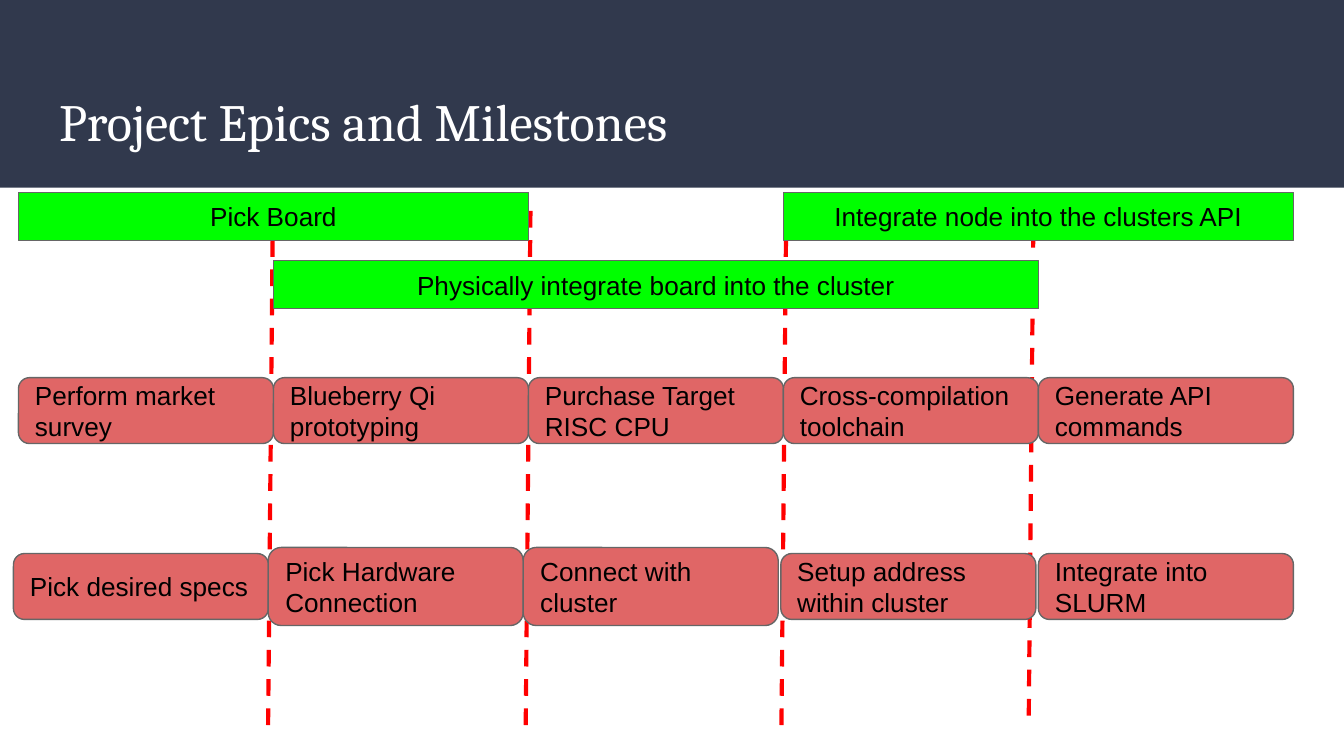
from lxml.etree import SubElement
from pptx import Presentation
from pptx.dml.color import RGBColor
from pptx.enum.dml import MSO_LINE_DASH_STYLE as Dash
from pptx.enum.shapes import MSO_CONNECTOR as Connector, MSO_SHAPE as Shape
from pptx.enum.text import MSO_ANCHOR as Anchor, PP_ALIGN as Align
from pptx.oxml.ns import qn
from pptx.util import Pt

NAVY = RGBColor(0x31, 0x39, 0x4D)
WHITE = RGBColor(0xFF, 0xFF, 0xFF)
BLACK = RGBColor(0, 0, 0)
GREEN = RGBColor(0, 0xFF, 0)
CORAL = RGBColor(0xE0, 0x66, 0x66)
GRAY = RGBColor(0x66, 0x66, 0x66)
RED = RGBColor(0xFF, 0, 0)

TITLE = "Project Epics and Milestones"
EPICS = [
    ("Pick Board", 0, 2, 103),
    ("Physically integrate board into the cluster", 1, 3, 139.7),
    ("Integrate node into the clusters API", 3, 2, 103),
]
FIRST_MILESTONES = [
    "Perform market survey",
    "Blueberry Qi prototyping",
    "Purchase Target RISC CPU",
    "Cross-compilation toolchain",
    "Generate API commands",
]
SECOND_MILESTONES = [
    ("Pick desired specs", 7.2, 35.3),
    ("Pick Hardware Connection", 143.7, 41.8),
    ("Connect with cluster", 280.3, 41.8),
    ("Setup address within cluster", 418.3, 35.3),
    ("Integrate into SLURM", 556.3, 35.3),
]
DIVIDERS = [(146.2, 113), (284.2, 113), (421.2, 113), (553.7, 108)]

LEFT, COLUMN = 9.9, 136.6
EPIC_HEIGHT, MILESTONE_HEIGHT = 25.8, 35.3
FIRST_CENTER, SECOND_CENTER = 220, 314.2
DIVIDER_HEIGHT, DIVIDER_SLANT = 280, 2.6
INSET = 7.2

TITLE_FONT = {"name": "Cambria", "size": Pt(28), "bold": False}
BOX_FONT = {"name": "Arial", "size": Pt(14)}


def write(shape, text, font, color, align, anchor):
    frame = shape.text_frame
    frame.text = text
    settings = {"word_wrap": True, "vertical_anchor": anchor}
    for side in ("left", "top", "right", "bottom"):
        settings[f"margin_{side}"] = Pt(INSET)
    for name, value in settings.items():
        setattr(frame, name, value)
    paragraph = frame.paragraphs[0]
    paragraph.alignment = align
    for name, value in font.items():
        setattr(paragraph.font, name, value)
    paragraph.font.color.rgb = color


def add_box(slide, kind, left, top, width, height, fill):
    shape = slide.shapes.add_shape(kind, Pt(left), Pt(top), Pt(width), Pt(height))
    shape.shadow.inherit = False
    shape.fill.solid()
    shape.fill.fore_color.rgb = fill
    shape.line.color.rgb = GRAY
    shape.line.width = Pt(0.75)
    return shape


def add_milestone(slide, text, left, center, height):
    shape = add_box(slide, Shape.ROUNDED_RECTANGLE, left, center - height / 2,
                    COLUMN, height, CORAL)
    write(shape, text, BOX_FONT, BLACK, Align.LEFT, Anchor.MIDDLE)


def add_divider(slide, left, top):
    line = slide.shapes.add_connector(
        Connector.STRAIGHT, Pt(left), Pt(top),
        Pt(left - DIVIDER_SLANT), Pt(top + DIVIDER_HEIGHT))
    line.line.color.rgb = RED
    line.line.width = Pt(2.25)
    line.line.dash_style = Dash.DASH
    SubElement(line.element.spPr, qn("a:effectLst"))


def main():
    presentation = Presentation()
    presentation.slide_width, presentation.slide_height = Pt(720), Pt(405)
    slide = presentation.slides.add_slide(presentation.slide_layouts[5])

    title = slide.shapes.title
    title.left, title.top, title.width, title.height = Pt(24.5), Pt(39.6), Pt(671), Pt(49)
    write(title, TITLE, TITLE_FONT, WHITE, Align.LEFT, Anchor.BOTTOM)
    band = add_box(slide, Shape.RECTANGLE, 0, 0, 720, 100.6, NAVY)
    band.line.fill.background()
    title.element.addprevious(band.element)

    for left, top in DIVIDERS:
        add_divider(slide, left, top)
    for text, column, span, top in EPICS:
        shape = add_box(slide, Shape.RECTANGLE, LEFT + column * COLUMN, top,
                        span * COLUMN, EPIC_HEIGHT, GREEN)
        write(shape, text, BOX_FONT, BLACK, Align.CENTER, Anchor.MIDDLE)
    for column, text in enumerate(FIRST_MILESTONES):
        add_milestone(slide, text, LEFT + column * COLUMN, FIRST_CENTER, MILESTONE_HEIGHT)
    for text, left, height in SECOND_MILESTONES:
        add_milestone(slide, text, left, SECOND_CENTER, height)

    presentation.save("out.pptx")


if __name__ == "__main__":
    main()
